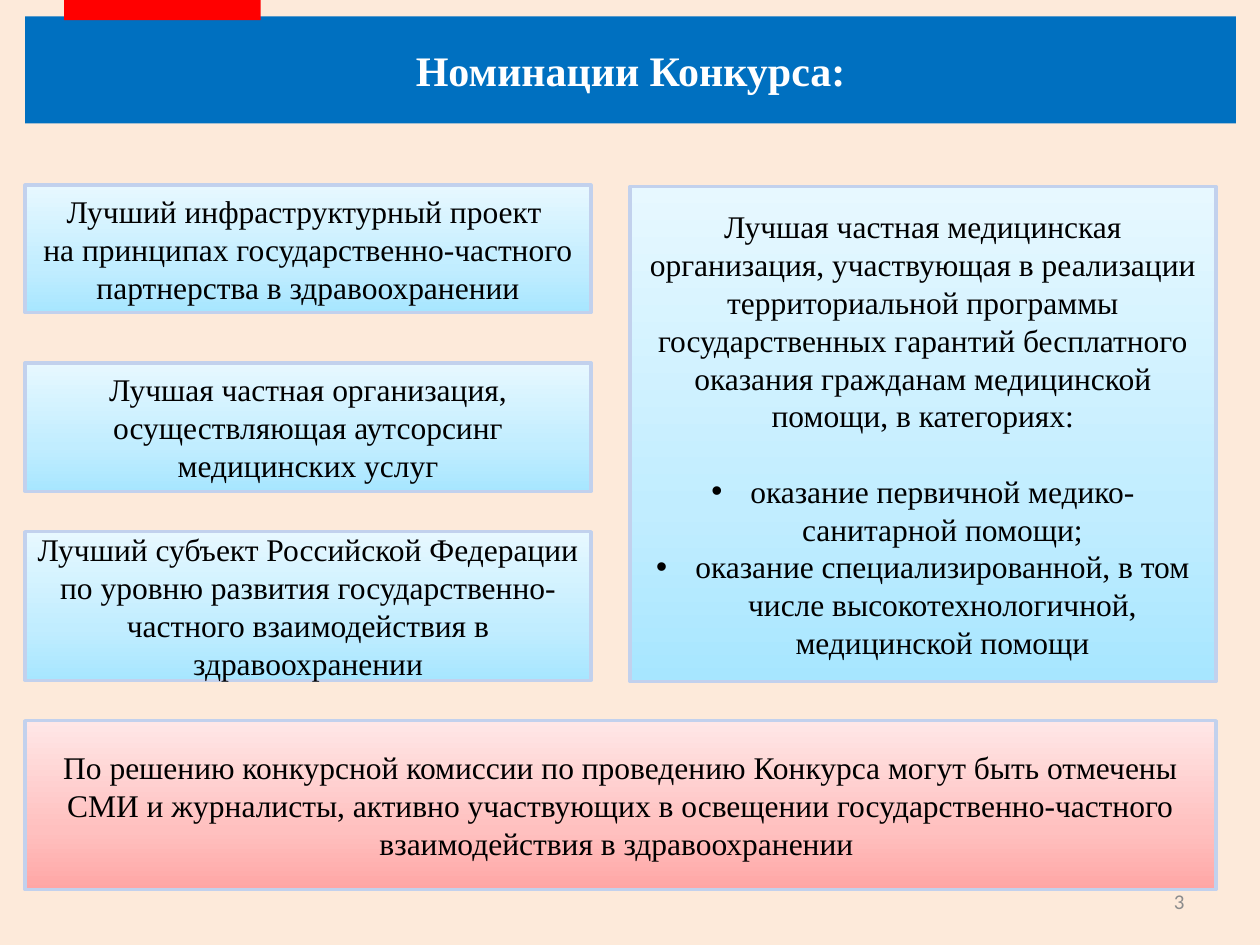
from copy import deepcopy

from lxml import etree
from pptx import Presentation
from pptx.dml.color import RGBColor
from pptx.enum import shapes, text
from pptx.oxml.ns import qn
from pptx.util import Inches, Pt

CREAM = RGBColor(0xFD, 0xEA, 0xDA)
BLUE = RGBColor(0x00, 0x70, 0xC0)
RED = RGBColor(0xFF, 0x00, 0x00)
WHITE = RGBColor(0xFF, 0xFF, 0xFF)
BLACK = RGBColor(0x00, 0x00, 0x00)
GREY = RGBColor(0x8C, 0x8C, 0x8C)
BORDER = RGBColor(0xC2, 0xD1, 0xED)
SKY = [RGBColor.from_string(c) for c in ("A7E6FF", "C1EDFF", "E7F8FF")]
ROSE = [RGBColor.from_string(c) for c in ("FFA6A5", "FFC0BF", "FFE7E7")]
STOPS = (0, 0.35, 1)

SERIF = "Times New Roman"
BODY = {"name": SERIF, "size": Pt(18), "bold": False}
HEADING = {"name": SERIF, "size": Pt(24), "bold": True}
NUMBER = {"name": "Calibri", "size": Pt(12), "bold": False}

LEFT, COLUMN = 0.2, 4.49
NOMINATIONS = [
    (1.47, 1.01, "Лучший инфраструктурный проект \vна принципах "
                 "государственно-частного партнерства в здравоохранении"),
    (2.88, 1.02, "Лучшая частная организация, осуществляющая аутсорсинг "
                 "медицинских услуг"),
    (4.22, 1.18, "Лучший субъект Российской Федерации по уровню развития "
                 "государственно-частного взаимодействия в здравоохранении"),
]
CLINIC = ("Лучшая частная медицинская организация, участвующая в реализации "
          "территориальной программы государственных гарантий бесплатного "
          "оказания гражданам медицинской помощи, в категориях:")
CATEGORIES = [
    "оказание первичной медико-санитарной помощи;",
    "оказание специализированной, в том числе высокотехнологичной, "
    "медицинской помощи",
]
PRESS = ("По решению конкурсной комиссии по проведению Конкурса могут быть "
         "отмечены СМИ и журналисты, активно участвующих в освещении "
         "государственно-частного взаимодействия в здравоохранении ")


def add_rectangle(page, box):
    shape = page.shapes.add_shape(shapes.MSO_SHAPE.RECTANGLE,
                                  *(Inches(value) for value in box))
    shape.shadow.inherit = False
    return shape


def add_bar(page, box, color):
    bar = add_rectangle(page, box)
    bar.fill.solid()
    bar.fill.fore_color.rgb = color
    bar.line.fill.background()
    return bar


def write_para(frame, words, style, color, align=text.PP_ALIGN.CENTER):
    """Fill the frame's empty first paragraph, or add one after the others."""
    para = frame.paragraphs[-1]
    if para.text:
        para = frame.add_paragraph()
    para.text = words
    para.alignment = align
    for span in para.runs:
        for name, value in style.items():
            setattr(span.font, name, value)
        span.font.color.rgb = color
    return para


def prepare_frame(shape):
    frame = shape.text_frame
    frame.word_wrap = True
    frame.vertical_anchor = text.MSO_ANCHOR.MIDDLE
    return frame


def fill_gradient(shape, colors):
    """Fade upwards through three colours."""
    shape.fill.gradient()
    shape.fill.gradient_angle = 90
    stop_list = shape._element.spPr.find(qn("a:gradFill")).find(qn("a:gsLst"))
    stop_list.append(deepcopy(stop_list[-1]))
    for stop, position, color in zip(shape.fill.gradient_stops, STOPS, colors):
        stop.position = position
        stop.color.rgb = color


def add_bullet(para):
    props = para._p.get_or_add_pPr()
    props.set("marL", str(Inches(0.31)))
    props.set("indent", str(-Inches(0.31)))
    etree.SubElement(props, qn("a:buFont"), typeface="Arial")
    etree.SubElement(props, qn("a:buChar"), char="•")


def add_card(page, box, words, colors, bullets=()):
    card = add_rectangle(page, box)
    fill_gradient(card, colors)
    card.line.color.rgb = BORDER
    card.line.width = Pt(2)
    frame = prepare_frame(card)
    write_para(frame, words, BODY, BLACK)
    for index, bullet in enumerate(bullets):
        para = write_para(frame, bullet, BODY, BLACK)
        if index == 0:
            para.space_before = Pt(21.5)
        add_bullet(para)


def add_header(page, box):
    left, top, width, height = box
    title = add_bar(page, (left, top, width, height), BLUE)
    write_para(prepare_frame(title), "Номинации Конкурса:", HEADING, WHITE)
    add_bar(page, (left + 0.31, 0, 1.56, 0.16), RED)


def add_page_number(page, box):
    number = page.shapes.add_textbox(*(Inches(value) for value in box))
    write_para(prepare_frame(number), "3", NUMBER, GREY, text.PP_ALIGN.RIGHT)


def main():
    deck = Presentation()
    deck.slide_width, deck.slide_height = Inches(10), Inches(7.5)
    page = deck.slides.add_slide(deck.slide_layouts[6])
    page.background.fill.solid()
    page.background.fill.fore_color.rgb = CREAM

    add_header(page, (LEFT, 0.13, 9.61, 0.85))
    add_page_number(page, (7.17, 6.95, 2.33, 0.4))
    for top, height, words in NOMINATIONS:
        add_card(page, (LEFT, top, COLUMN, height), words, SKY)
    add_card(page, (5, 1.48, 4.65, 3.93), CLINIC, SKY, CATEGORIES)
    add_card(page, (LEFT, 5.72, 9.45, 1.34), PRESS, ROSE)
    deck.save("out.pptx")


if __name__ == "__main__":
    main()
